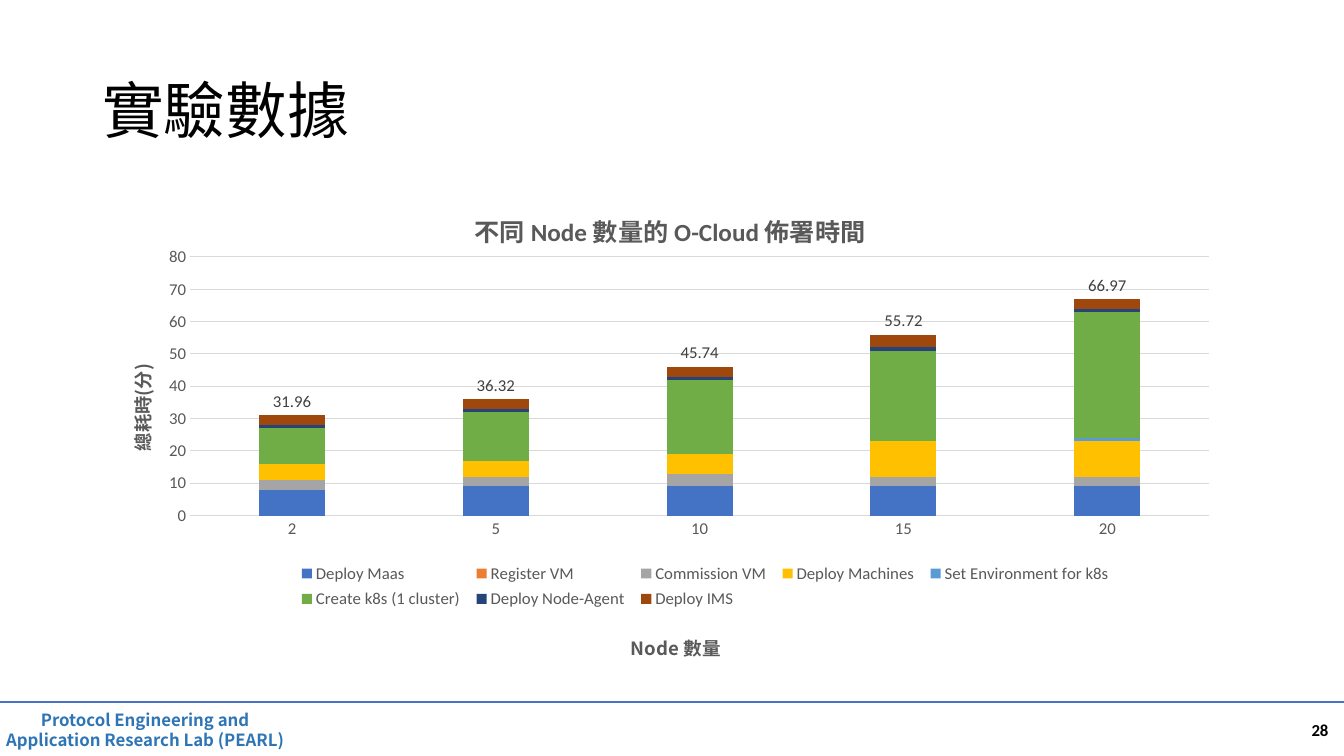
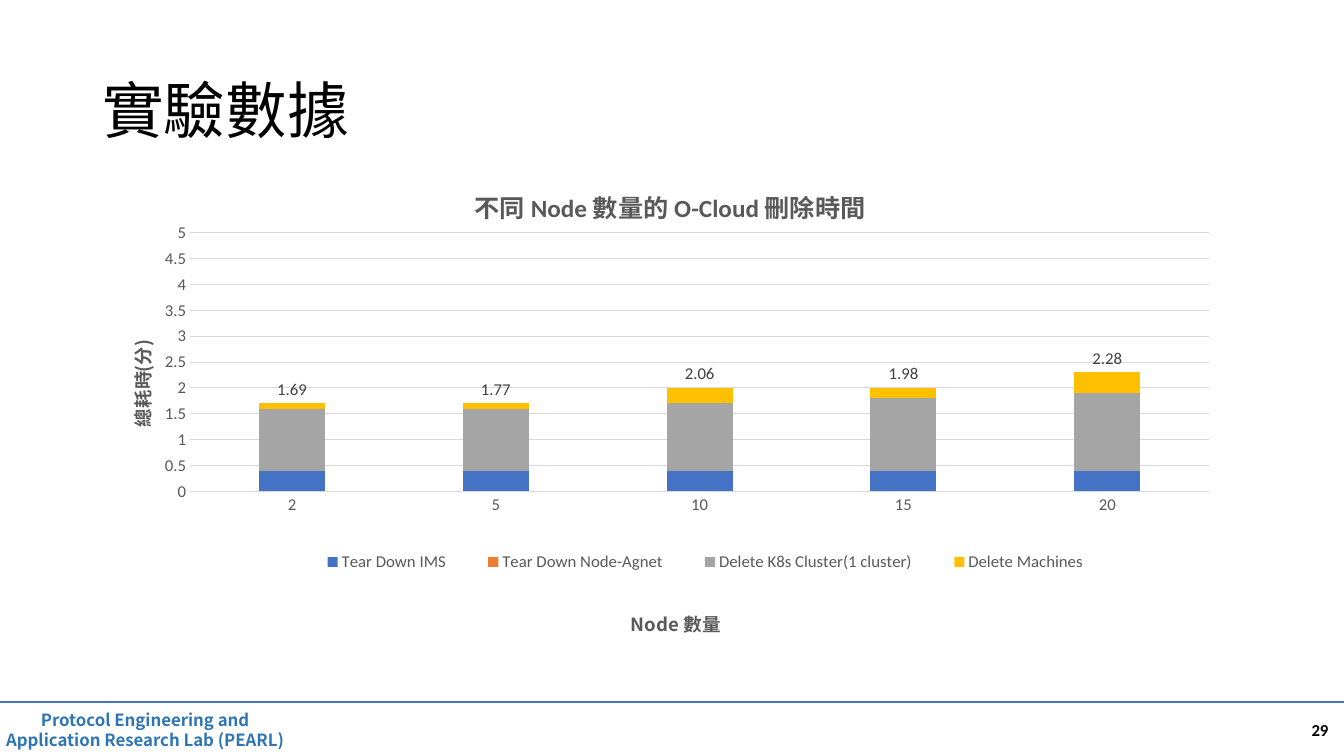
from dataclasses import dataclass

from pptx import Presentation
from pptx import util as u
from pptx.chart import data as cd
from pptx.dml import color as dc
from pptx.enum import chart as ce
from pptx.enum import shapes, text
from pptx.oxml import xmlchemy as xc


@dataclass(frozen=True)
class Theme:
    ink: str = "000000"
    grey: str = "595959"
    label: str = "404040"
    grid: str = "D9D9D9"
    rule: str = "4472C4"
    lab: str = "2E75B6"
    hues: tuple = ("4472C4", "ED7D31", "A5A5A5", "FFC000",
                   "5B9BD5", "70AD47", "264478", "9E480E")
    latin: str = "Calibri"
    cjk: str = "Noto Sans CJK SC"
    head: float = 44
    title: float = 18
    axis: float = 13.3
    small: float = 12
    base: float = 10


T = Theme()
WIDE, HIGH = 33.87, 19.05
NODES = ("2", "5", "10", "15", "20")
CHARTS = (
    dict(page=28, top=4.7, title="不同 Node 數量的 O-Cloud 佈署時間", peak=80, step=10,
         parts={
             "Deploy Maas": (8, 9, 9, 9, 9),
             "Register VM": (0, 0, 0, 0, 0),
             "Commission VM": (3, 3, 4, 3, 3),
             "Deploy Machines": (5, 5, 6, 11, 11),
             "Set Environment for k8s": (0, 0, 0, 0, 1),
             "Create k8s (1 cluster)": (11, 15, 23, 28, 39),
             "Deploy Node-Agent": (1, 1, 1, 1, 1),
             "Deploy IMS": (3, 3, 3, 4, 3),
         },
         total=(31.96, 36.32, 45.74, 55.72, 66.97)),
    dict(page=29, top=4.09, title="不同 Node 數量的 O-Cloud 刪除時間", peak=5, step=0.5,
         parts={
             "Tear Down IMS": (0.4, 0.4, 0.4, 0.4, 0.4),
             "Tear Down Node-Agnet": (0, 0, 0, 0, 0),
             "Delete K8s Cluster(1 cluster)": (1.2, 1.2, 1.3, 1.4, 1.5),
             "Delete Machines": (0.1, 0.1, 0.3, 0.2, 0.4),
         },
         total=(1.69, 1.77, 2.06, 1.98, 2.28)),
)


def put(obj, **vals):
    for key, val in vals.items():
        setattr(obj, key, val)


def rgb(hue):
    return dc.RGBColor.from_string(hue)


def style(font, size, hue, bold=False, name=T.latin):
    put(font, size=u.Pt(size), bold=bold, name=name)
    font.color.rgb = rgb(hue)


def write(para, words, *look):
    run = para.add_run()
    run.text = words
    style(run.font, *look)
    east = xc.OxmlElement("a:ea")
    east.set("typeface", T.cjk)
    run.font._element.find("{*}latin").addnext(east)


def add_text(slide, box, words, look, frame=None, para=None):
    area = slide.shapes.add_textbox(*map(u.Cm, box)).text_frame
    put(area, word_wrap=True, **(frame or {}))
    put(area.paragraphs[0], **(para or {}))
    write(area.paragraphs[0], words, *look)


def add_frame(slide, page):
    """Heading, rule, lab name and page number."""
    middle = dict(vertical_anchor=text.MSO_ANCHOR.MIDDLE)
    add_text(slide, (2.33, 1.01, 29.21, 3.68), "實驗數據",
             (T.head, T.ink, False, T.cjk), middle, dict(line_spacing=0.9))
    rule = slide.shapes.add_connector(
        shapes.MSO_CONNECTOR.STRAIGHT, 0, u.Cm(17.68), u.Cm(WIDE), u.Cm(17.68))
    rule.line.width = u.Pt(1.5)
    rule.line.color.rgb = rgb(T.rule)
    rule._element.spPr.append(xc.OxmlElement("a:effectLst"))
    add_text(slide, (-0.3, 17.75, 7.92, 1.27),
             "Protocol Engineering and Application Research Lab (PEARL)",
             (T.small, T.lab, True, T.cjk),
             para=dict(alignment=text.PP_ALIGN.CENTER))
    add_text(slide, (26.11, 17.88, 7.62, 1.01), str(page),
             (T.small, T.ink, True), middle,
             dict(alignment=text.PP_ALIGN.RIGHT))


def place(part, spot, **vals):
    """Give a chart part a manual layout, as child number spot."""
    for old in part.findall("{*}layout"):
        part.remove(old)
    layout = xc.OxmlElement("c:layout")
    manual = xc.OxmlElement("c:manualLayout")
    layout.append(manual)
    for key, val in vals.items():
        item = xc.OxmlElement(f"c:{key}")
        item.set("val", str(val))
        manual.append(item)
    part.insert(spot, layout)


def set_title(title, words, look, x, y):
    """Fill the title of a chart or an axis, with its corner at x, y."""
    write(title.text_frame.paragraphs[0], words, *look)
    place(title.element, 1, xMode="edge", yMode="edge", x=x, y=y)


def set_axes(chart, peak, step):
    cat, val = chart.category_axis, chart.value_axis
    put(val, minimum_scale=0, maximum_scale=peak, major_unit=step)
    for axis, words, x, y in ((cat, "Node 數量", 0.46, 0.94),
                              (val, "總耗時(分)", 0.01, 0.37)):
        put(axis, major_tick_mark=ce.XL_TICK_MARK.NONE,
            minor_tick_mark=ce.XL_TICK_MARK.NONE)
        style(axis.tick_labels.font, T.small, T.grey)
        set_title(axis.axis_title, words, (T.axis, T.grey, True, T.cjk), x, y)
    for line in (cat.format.line, val.major_gridlines.format.line):
        line.width = u.Pt(0.75)
        line.color.rgb = rgb(T.grid)
    val.format.line.fill.background()


def set_key(chart, hide):
    """Legend at the bottom, without the entry numbered hide."""
    chart.has_legend = True
    put(chart.legend, position=ce.XL_LEGEND_POSITION.BOTTOM,
        include_in_layout=False)
    style(chart.legend.font, T.small, T.grey)
    key = chart.element.xpath(".//c:legend")[0]
    entry = xc.OxmlElement("c:legendEntry")
    for tag, val in (("idx", hide), ("delete", 1)):
        item = xc.OxmlElement(f"c:{tag}")
        item.set("val", str(val))
        entry.append(item)
    key.insert(1, entry)
    place(key, 2, xMode="edge", yMode="edge", x=0.16, y=0.79, w=0.74, h=0.12)


def set_bars(chart):
    plot = chart.plots[0]
    put(plot, gap_width=209, overlap=100, vary_by_categories=False)
    *bars, total = plot.series
    for bar, hue in zip(bars, T.hues):
        bar.format.fill.solid()
        bar.format.fill.fore_color.rgb = rgb(hue)
    total.format.fill.background()
    total.format.line.fill.background()
    labels = total.data_labels
    put(labels, show_value=True, number_format="0.00",
        number_format_is_linked=False,
        position=ce.XL_LABEL_POSITION.INSIDE_BASE)
    style(labels.font, T.small, T.label)


def add_stack(slide, box, title, parts, total, peak, step):
    """Stacked columns, with the sums as labels on an unfilled top series."""
    data = cd.CategoryChartData()
    data.categories = NODES
    for name, vals in parts.items():
        data.add_series(name, vals)
    data.add_series(f"Series {len(parts) + 1}", total)
    chart = slide.shapes.add_chart(
        ce.XL_CHART_TYPE.COLUMN_STACKED, *map(u.Cm, box), data).chart
    style(chart.font, T.base, T.ink)
    set_title(chart.chart_title, title, (T.title, T.grey, True), 0.32, 0.04)
    set_axes(chart, peak, step)
    set_key(chart, len(parts))
    set_bars(chart)
    place(chart.element.xpath(".//c:plotArea")[0], 0, layoutTarget="inner",
          xMode="edge", yMode="edge", x=0.07, y=0.15, w=0.91, h=0.55)


def main():
    deck = Presentation()
    put(deck, slide_width=u.Cm(WIDE), slide_height=u.Cm(HIGH))
    for item in CHARTS:
        facts = dict(item)
        slide = deck.slides.add_slide(deck.slide_layouts[6])
        add_frame(slide, facts.pop("page"))
        add_stack(slide, (2.82, facts.pop("top"), 28.22, 12.09), **facts)
    deck.save("out.pptx")


if __name__ == "__main__":
    main()
